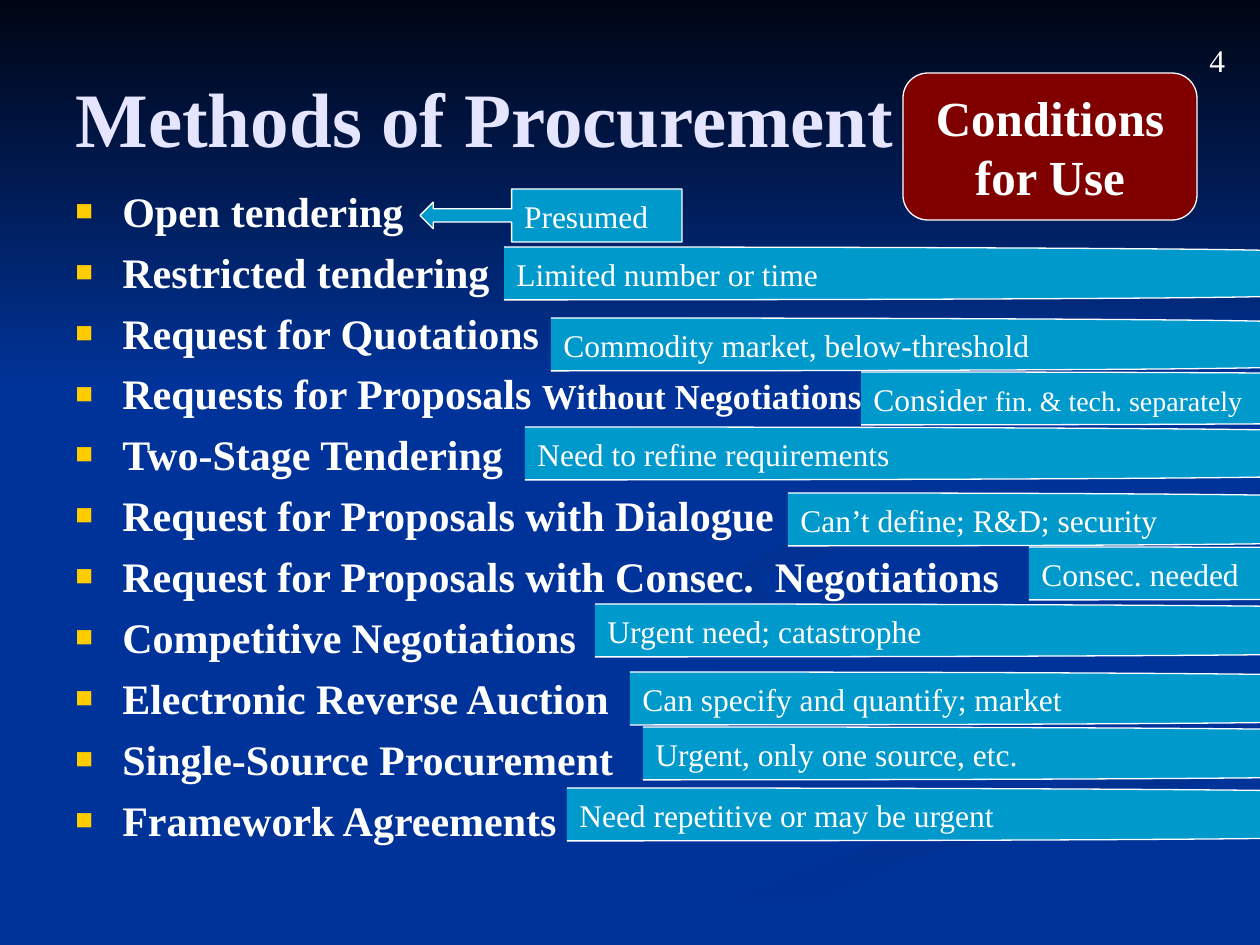
from lxml.etree import SubElement
from pptx import Presentation
from pptx.dml.color import RGBColor
from pptx.enum.shapes import MSO_SHAPE as Shape
from pptx.enum.text import MSO_ANCHOR as Anchor, PP_ALIGN as Align
from pptx.oxml.ns import qn
from pptx.util import Emu, Pt

PX = 914400 / 126
WIDTH, HEIGHT = 1260, 945
FONT = "Times New Roman"
NAVY = RGBColor(0x00, 0x33, 0x99)
DEEP_NAVY = RGBColor(0x00, 0x2F, 0x8E)
NIGHT = RGBColor(0x00, 0x05, 0x14)
LAVENDER = RGBColor(0xE5, 0xE5, 0xFF)
WHITE = RGBColor(0xFF, 0xFF, 0xFF)
CYAN = RGBColor(0x00, 0x99, 0xCC)
MAROON = RGBColor(0x80, 0x00, 0x00)
GOLD = "FFCC00"

TITLE = "Methods of Procurement"
BADGE = "Conditions for Use"
PAGE = "4"
METHOD_SIZE, CONDITION_SIZE = 24, 18
LABEL_HEIGHT = 53
# method, condition, label (left, top, width)
METHODS = [
    ("Open tendering", "Presumed", (420, 189, 262)),
    ("Restricted tendering", "Limited number or time", (504, 247, 777)),
    ("Request for Quotations", "Commodity market, below-threshold", (551, 318, 730)),
    (["Requests for Proposals ", ("Without Negotiations", 20)],
     ["Consider ", ("fin. & tech. separately", 16)], (861, 372, 609)),
    ("Two-Stage Tendering", "Need to refine requirements", (525, 427, 780)),
    ("Request for Proposals with Dialogue", "Can’t define; R&D; security", (788, 493, 546)),
    ("Request for Proposals with Consec.  Negotiations", "Consec. needed", (1029, 547, 552)),
    ("Competitive Negotiations", "Urgent need; catastrophe", (595, 604, 760)),
    ("Electronic Reverse Auction", "Can specify and quantify; market", (630, 672, 703)),
    ("Single-Source Procurement", "Urgent, only one source, etc.", (643, 727, 712)),
    ("Framework Agreements", "Need repetitive or may be urgent", (567, 788, 766)),
]
# start colour, end colour, angle, outline
BACKDROPS = [
    (DEEP_NAVY, NAVY, 270, [(634, 944), (719, 944), (910, 859), (1257, 767),
                            (1257, 732), (963, 815), (794, 873)]),
    (DEEP_NAVY, NAVY, 315, [(861, 542), (1077, 493), (1126, 433), (960, 294), (1120, 422),
                            (1061, 476), (802, 532), (728, 575), (784, 630), (757, 575)]),
    (NIGHT, NAVY, 270, [(0, 0), (0, 388), (WIDTH, 388), (WIDTH, 0)]),
]


def px(*lengths):
    return [Emu(round(length * PX)) for length in lengths]


def write(holder, paragraphs, size, color=WHITE, bold=False, align=Align.LEFT,
          anchor=Anchor.MIDDLE, before=0, bullet=None):
    frame = holder.text_frame
    frame.word_wrap = True
    frame.vertical_anchor = anchor
    for index, runs in enumerate(paragraphs):
        paragraph = frame.add_paragraph() if index else frame.paragraphs[0]
        paragraph.alignment = align
        paragraph.space_before = Pt(before)
        if bullet:
            add_bullet(paragraph, bullet)
        for part in [runs] if isinstance(runs, str) else runs:
            text, run_size = (part, size) if isinstance(part, str) else part
            run = paragraph.add_run()
            run.text = text
            run.font.name, run.font.size, run.font.bold = FONT, Pt(run_size), bold
            run.font.color.rgb = color


def add_bullet(paragraph, bullet):
    properties = paragraph._p.get_or_add_pPr()
    indent = px(47)[0]
    properties.set("marL", str(indent))
    properties.set("indent", str(-indent))
    color = SubElement(properties, qn("a:buClr"))
    SubElement(color, qn("a:srgbClr"), val=GOLD)
    SubElement(properties, qn("a:buSzPct"), val="70000")
    SubElement(properties, qn("a:buFont"), typeface=FONT)
    SubElement(properties, qn("a:buChar"), char=bullet)


def add_backdrop(slide, start, end, angle, outline):
    builder = slide.shapes.build_freeform(*outline[0], scale=PX)
    builder.add_line_segments(outline[1:], close=True)
    backdrop = builder.convert_to_shape()
    backdrop.shadow.inherit = False
    backdrop.line.fill.background()
    backdrop.fill.gradient()
    backdrop.fill.gradient_angle = angle
    for stop, color in zip(backdrop.fill.gradient_stops, (start, end)):
        stop.color.rgb = color
    slide.shapes.title._element.addprevious(backdrop._element)


def add_label(slide, kind, box, text, adjustments, fill=CYAN, size=CONDITION_SIZE, **style):
    label = slide.shapes.add_shape(kind, *px(*box))
    label.shadow.inherit = False
    for index, value in enumerate(adjustments):
        label.adjustments[index] = value
    label.fill.solid()
    label.fill.fore_color.rgb = fill
    label.line.color.rgb = WHITE
    label.line.width = Pt(0.75)
    write(label, [text], size, **style)


def main():
    deck = Presentation()
    deck.slide_width, deck.slide_height = px(WIDTH, HEIGHT)
    slide = deck.slides.add_slide(deck.slide_layouts[5])
    slide.background.fill.solid()
    slide.background.fill.fore_color.rgb = NAVY
    for backdrop in BACKDROPS:
        add_backdrop(slide, *backdrop)

    title = slide.shapes.title
    title.left, title.top, title.width, title.height = px(63, 38, 1134, 158)
    write(title, [TITLE], 44, color=LAVENDER, bold=True)
    page = slide.shapes.add_textbox(*px(1197, 35, 63, 50))
    write(page, [PAGE], CONDITION_SIZE, anchor=Anchor.TOP)
    method_list = slide.shapes.add_textbox(*px(63, 179, 1134, 624))
    write(method_list, [method for method, _, _ in METHODS], METHOD_SIZE, bold=True,
          anchor=Anchor.TOP, before=6, bullet="■")

    add_label(slide, Shape.ROUNDED_RECTANGLE, (903, 73, 294, 147), BADGE, [0.17],
              fill=MAROON, size=28, bold=True, align=Align.CENTER)
    for index, (_, condition, (left, top, width)) in enumerate(METHODS):
        kind, adjustments = (
            (Shape.RIGHT_BRACKET, [0.08]) if index
            else (Shape.LEFT_ARROW_CALLOUT, [0.25, 0.25, 0.25, 0.65]))
        add_label(slide, kind, (left, top, width, LABEL_HEIGHT), condition, adjustments)
    deck.save("out.pptx")


if __name__ == "__main__":
    main()
